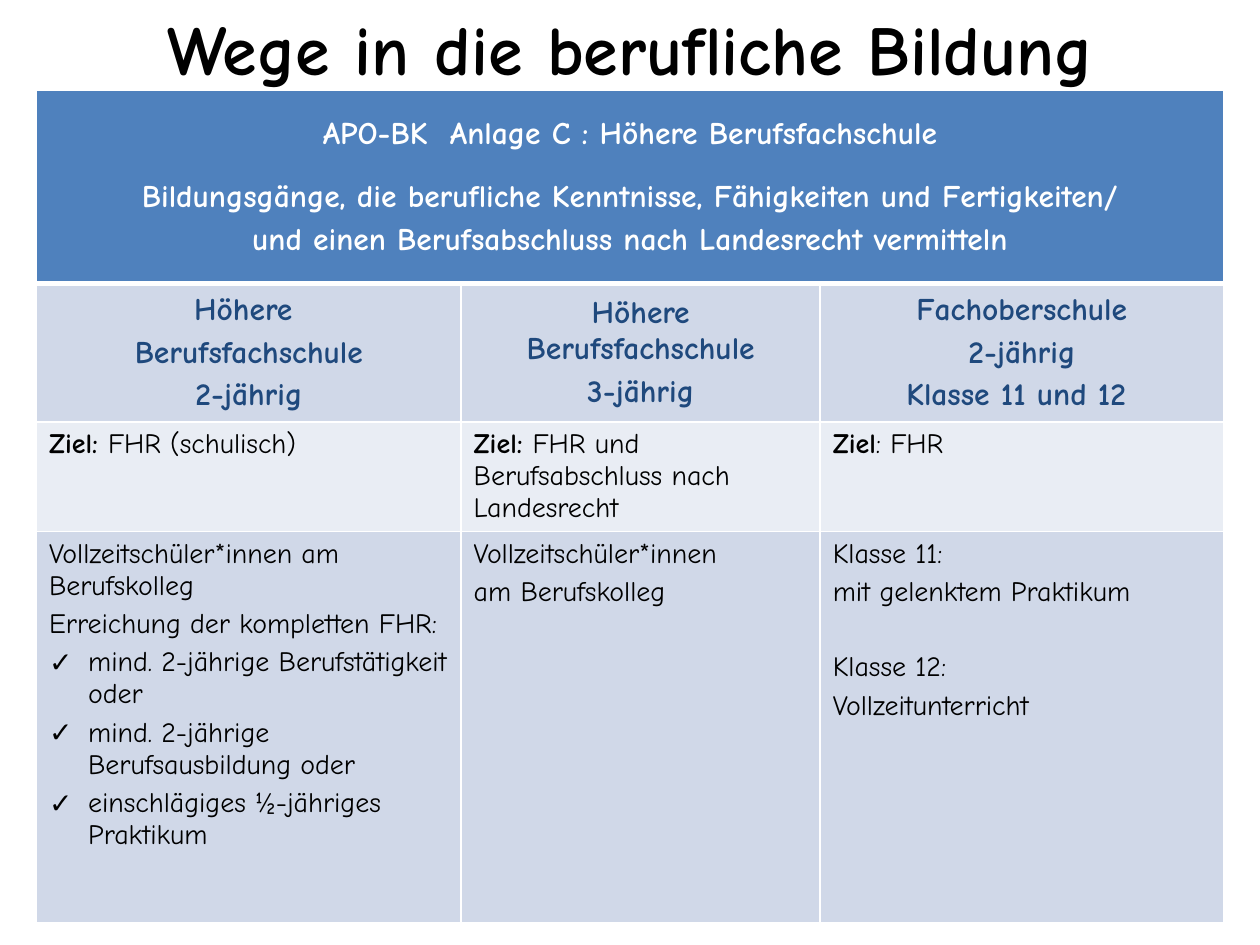
"""Build a slide with a table of vocational school paths."""
from lxml.etree import SubElement
from pptx import Presentation
from pptx.dml.color import RGBColor
from pptx.enum.text import MSO_ANCHOR, MSO_AUTO_SIZE, PP_ALIGN
from pptx.oxml.ns import qn
from pptx.util import Inches, Pt

THEME = {
    "font": "Comic Neue", "title": 40, "head": 18, "body": 16,
    "black": "000000", "white": "FFFFFF", "navy": "1F497D",
    "blue": "4F81BD", "mid": "D0D8E8", "pale": "E9EDF4",
    "gap": 3.5, "indent": 0.31,
}
TITLE = "Wege in die berufliche Bildung"
BOX = (0.5, -0.08, 9, 0.92)
GRID = (0.29, 0.72)
COLS = [3.37, 2.85, 3.2]
ROWS = [1.53, 1.1, 0.87, 3.1]

HEAD = [
    "APO-BK\u00a0 Anlage C : Höhere Berufsfachschule",
    ("Bildungsgänge, die berufliche Kenntnisse, Fähigkeiten und Fertigkeiten/", 15.3),
    "und einen Berufsabschluss nach Landesrecht vermitteln",
]
KINDS = [
    ["Höhere\u00a0", "Berufsfachschule", "2-jährig"],
    ["Höhere Berufsfachschule", "3-jährig"],
    ["Fachoberschule", "2-jährig", "Klasse 11 und 12\u00a0"],
]
GOALS = [
    [["Ziel: ", "FHR (schulisch)"]],
    [["Ziel: ", "FHR und Berufsabschluss\u00a0nach Landesrecht"]],
    [["Ziel", ": FHR"]],
]
FACTS = [
    [
        "Vollzeitschüler*innen am Berufskolleg",
        "Erreichung der kompletten FHR:",
        "✓mind. 2-jährige Berufstätigkeit oder",
        "✓mind. 2-jährige Berufsausbildung oder",
        "✓einschlägiges ½-jähriges Praktikum",
    ],
    ["Vollzeitschüler*innen", "am Berufskolleg"],
    ["Klasse 11:\u00a0", "mit gelenktem Praktikum",
     ("Klasse 12:\u00a0", 24.8), "Vollzeitunterricht"],
]
BANDS = [
    ([HEAD], "blue", "white", "head", True),
    (KINDS, "mid", "navy", "head", True),
    (GOALS, "pale", "black", "body", False),
    (FACTS, "mid", "black", "body", False),
]


def tint(name):
    return RGBColor.from_string(THEME[name])


def add_run(para, text, size, color, bold):
    run = para.add_run()
    run.text = text
    font = run.font
    font.name, font.size, font.bold = THEME["font"], Pt(THEME[size]), bold
    font.color.rgb = tint(color)


def add_tick(para, mark):
    props = para._p.get_or_add_pPr()
    step = Inches(THEME["indent"])
    props.set("marL", str(step))
    props.set("indent", str(-step))
    SubElement(props, qn("a:buFont"), typeface="Arial")
    SubElement(props, qn("a:buChar"), char=mark)


def add_edges(cell, first):
    props = cell._tc.get_or_add_tcPr()
    for side in "LRTB":
        thick = (first and side == "B")
        line = SubElement(props, qn(f"a:ln{side}"), w=str(Pt(3 if thick else 1)))
        fill = SubElement(line, qn("a:solidFill"))
        SubElement(fill, qn("a:srgbClr"), val=THEME["white"])


def fill_cell(cell, lines, size, color, strong):
    frame = cell.text_frame
    for i, line in enumerate(lines):
        para = frame.paragraphs[0] if i == 0 else frame.add_paragraph()
        text, gap = line if isinstance(line, tuple) else (line, THEME["gap"])
        para.alignment = PP_ALIGN.CENTER if strong else PP_ALIGN.LEFT
        para.space_before = Pt(gap)
        if isinstance(text, list):
            for part, bold in zip(text, (True, False)):
                add_run(para, part, size, color, bold)
            continue
        if text.startswith("✓"):
            add_tick(para, "✓")
        add_run(para, text.lstrip("✓"), size, color, strong)


def add_title(slide):
    title = slide.shapes.title
    title.left, title.top, title.width, title.height = map(Inches, BOX)
    frame = title.text_frame
    frame.auto_size = MSO_AUTO_SIZE.NONE
    frame.vertical_anchor = MSO_ANCHOR.MIDDLE
    para = frame.paragraphs[0]
    para.alignment = PP_ALIGN.CENTER
    add_run(para, TITLE, "title", "black", True)


def add_grid(slide):
    size = (sum(COLS), sum(ROWS))
    table = slide.shapes.add_table(
        len(ROWS), len(COLS), *map(Inches, GRID + size)).table
    for col, width in zip(table.columns, COLS):
        col.width = Inches(width)
    for row, height in zip(table.rows, ROWS):
        row.height = Inches(height)
    table.cell(0, 0).merge(table.cell(0, len(COLS) - 1))
    for r, (texts, back, color, type_size, strong) in enumerate(BANDS):
        for c in range(len(COLS)):
            cell = table.cell(r, c)
            add_edges(cell, r == 0)
            cell.fill.solid()
            cell.fill.fore_color.rgb = tint(back)
            cell.vertical_anchor = MSO_ANCHOR.MIDDLE if strong else MSO_ANCHOR.TOP
            if c < len(texts):
                fill_cell(cell, texts[c], type_size, color, strong)


def main():
    deck = Presentation()
    deck.slide_width, deck.slide_height = Inches(10), Inches(7.5)
    slide = deck.slides.add_slide(deck.slide_layouts[5])
    add_title(slide)
    add_grid(slide)
    deck.save("out.pptx")


if __name__ == "__main__":
    main()
